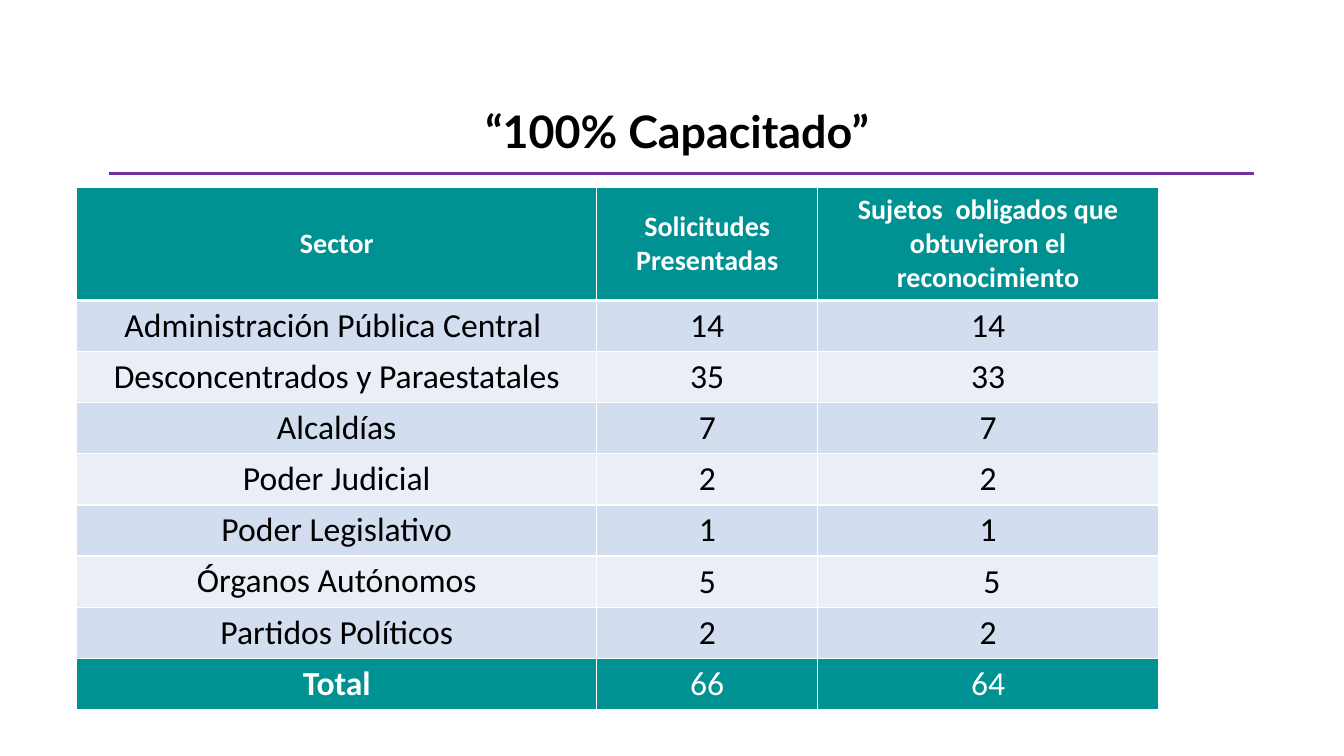
import pptx
import pptx.util
import pptx.dml.color
import pptx.enum.shapes
import pptx.enum.text
import pptx.oxml
import pptx.oxml.ns

Inches = pptx.util.Inches
CENTER = pptx.enum.text.PP_ALIGN.CENTER
MIDDLE = pptx.enum.text.MSO_ANCHOR.MIDDLE
TOP = pptx.enum.text.MSO_ANCHOR.TOP

COLORS = {
    "black": "000000",
    "white": "FFFFFF",
    "teal": "009193",
    "purple": "7030A0",
    "band_dark": "D2DEEF",
    "band_light": "EAEFF7",
}
ROWS = [
    ("Sector", "Solicitudes Presentadas", "Sujetos  obligados que obtuvieron el reconocimiento"),
    ("Administración Pública Central ", "14", "14"),
    ("Desconcentrados y Paraestatales", "35", "33"),
    ("Alcaldías", "7", "7"),
    ("Poder Judicial", "2", "2"),
    ("Poder Legislativo", "1", "1"),
    ("Órganos Autónomos", "5", " 5"),
    ("Partidos Políticos", "2", "2"),
    ("Total", "66", "64"),
]
COLUMN_WIDTHS = [5.16, 2.19, 3.38]
HEADER_HEIGHT = 1.11
ROW_HEIGHT = 0.45
TOP_ANCHORED = {(1, 0), (3, 2), (6, 0)}


def color(name):
    return pptx.dml.color.RGBColor.from_string(COLORS[name])


def write(para, text, font, size, tint, bold):
    para.alignment = CENTER
    span = para.add_run()
    span.text = text
    span.font.name = font
    span.font.size = pptx.util.Pt(size)
    span.font.bold = bold
    span.font.color.rgb = color(tint)


deck = pptx.Presentation()
deck.slide_width = Inches(13.33)
deck.slide_height = Inches(7.5)
page = deck.slides.add_slide(deck.slide_layouts.get_by_name("Title Only"))

rule = page.shapes.add_connector(
    pptx.enum.shapes.MSO_CONNECTOR.STRAIGHT,
    Inches(1.08), Inches(1.72), Inches(12.44), Inches(1.72))
rule.line.color.rgb = color("purple")
rule.line.width = pptx.util.Pt(2.25)
rule._element.spPr.append(pptx.oxml.parse_xml(
    f"<a:effectLst {pptx.oxml.ns.nsdecls('a')}/>"))

title = page.shapes.title
title.left, title.top = Inches(4.3), Inches(1.04)
title.width, title.height = Inches(4.73), Inches(0.71)
title.text_frame.word_wrap = True
title.text_frame.auto_size = pptx.enum.text.MSO_AUTO_SIZE.NONE
title.text_frame.vertical_anchor = TOP
heading = title.text_frame.paragraphs[0]
heading.line_spacing = 0.9
write(heading, " “100% Capacitado”", "Lato", 32, "black", True)

table = page.shapes.add_table(
    len(ROWS), len(COLUMN_WIDTHS), Inches(0.76), Inches(1.86),
    Inches(sum(COLUMN_WIDTHS)),
    Inches(HEADER_HEIGHT + ROW_HEIGHT * (len(ROWS) - 1))).table
for column, width in zip(table.columns, COLUMN_WIDTHS):
    column.width = Inches(width)

last = len(ROWS) - 1
for r, values in enumerate(ROWS):
    table.rows[r].height = Inches(ROW_HEIGHT if r else HEADER_HEIGHT)
    band = "teal" if r in (0, last) else "band_dark" if r % 2 else "band_light"
    for c, value in enumerate(values):
        cell = table.cell(r, c)
        cell.vertical_anchor = TOP if (r, c) in TOP_ANCHORED else MIDDLE
        for side in "LRTB":
            header_edge = (r, side) in ((0, "B"), (1, "T"))
            cell._tc.get_or_add_tcPr().append(pptx.oxml.parse_xml(
                f"<a:ln{side} {pptx.oxml.ns.nsdecls('a')} w='{pptx.util.Pt(3 if header_edge else 1)}'>"
                f"<a:solidFill><a:srgbClr val='{COLORS['white']}'/></a:solidFill></a:ln{side}>"))
        cell.fill.solid()
        cell.fill.fore_color.rgb = color(band)
        write(cell.text_frame.paragraphs[0], value, "Calibri", 24 if r else 20,
              "white" if band == "teal" else "black", r == 0 or (r, c) == (last, 0))

deck.save("out.pptx")
